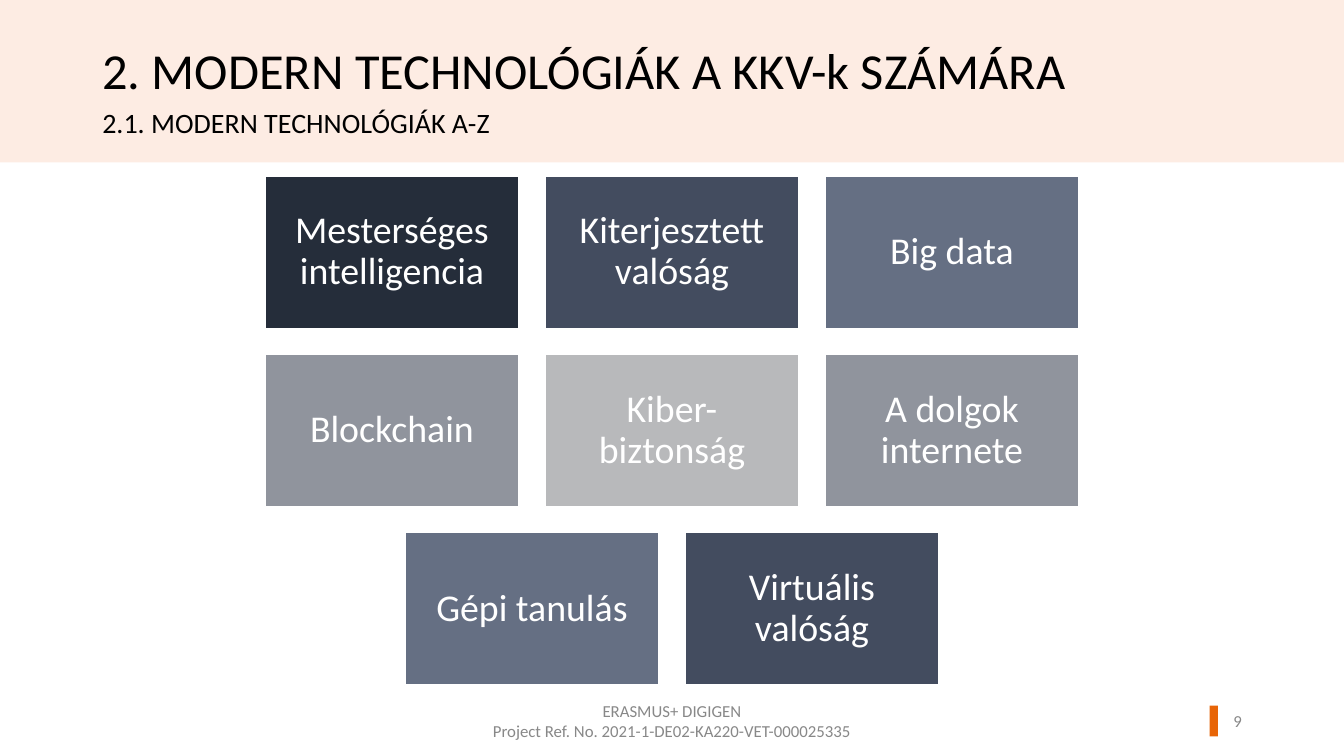
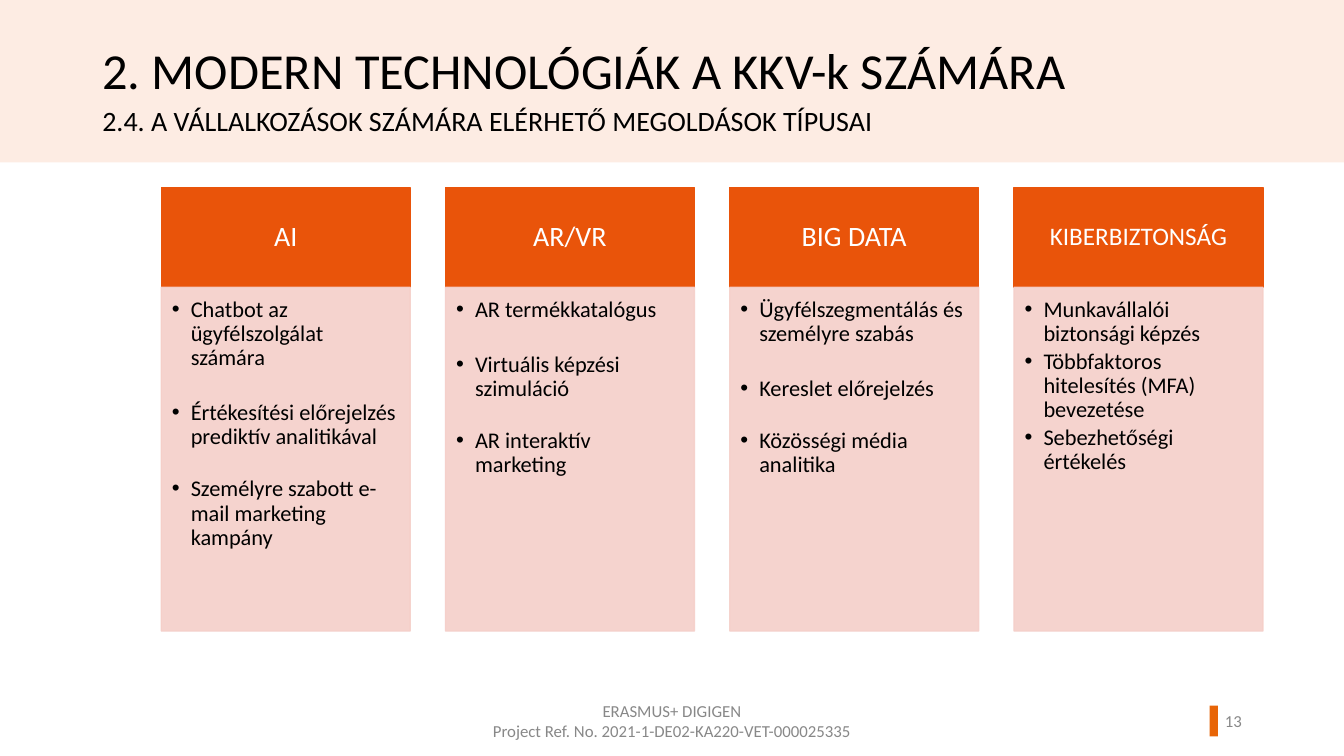
from lxml.etree import SubElement
from pptx import Presentation
from pptx.dml.color import RGBColor
from pptx.enum.shapes import MSO_SHAPE as Preset
from pptx.enum.text import MSO_ANCHOR as Anchor, PP_ALIGN as Align
from pptx.oxml.ns import qn
from pptx.util import Pt

COLORS = {
    "band": "FDECE3", "accent": "E86507", "footer": "888888",
    "text": "000000", "white": "FFFFFF",
    "header": "E9540A", "body": "F5CFC9",
    "navy": "252D3A", "slate": "434C5F", "steel": "656F83",
    "grey": "90949D", "silver": "B8B9BB",
}
FONT = "Calibri"
SLIDE_WIDTH, SLIDE_HEIGHT = 960, 540

TITLE = "2. MODERN TECHNOLÓGIÁK A KKV-k SZÁMÁRA"
FOOTER = "ERASMUS+ DIGIGEN\nProject Ref. No. 2021-1-DE02-KA220-VET-000025335"

TECHNOLOGY_ROWS = [
    [("Mesterséges intelligencia", "navy"), ("Kiterjesztett valóság", "slate"), ("Big data", "steel")],
    [("Blockchain", "grey"), ("Kiber-\nbiztonság", "silver"), ("A dolgok internete", "grey")],
    [("Gépi tanulás", "steel"), ("Virtuális valóság", "slate")],
]

WIDE_GAPS = (0, 22, 20)
TIGHT_GAPS = (0, 2.7, 2.7)
SOLUTIONS = [
    ("AI", 20, WIDE_GAPS, [
        "Chatbot az ügyfélszolgálat számára",
        "Értékesítési előrejelzés prediktív analitikával",
        "Személyre szabott e-mail marketing kampány",
    ]),
    ("AR/VR", 20, WIDE_GAPS, [
        "AR termékkatalógus",
        "Virtuális képzési szimuláció",
        "AR interaktív marketing",
    ]),
    ("BIG DATA", 20, WIDE_GAPS, [
        "Ügyfélszegmentálás és személyre szabás",
        "Kereslet előrejelzés",
        "Közösségi média analitika",
    ]),
    ("KIBERBIZTONSÁG", 18, TIGHT_GAPS, [
        "Munkavállalói biztonsági képzés",
        "Többfaktoros hitelesítés (MFA) bevezetése",
        "Sebezhetőségi értékelés",
    ]),
]


def rgb(name):
    return RGBColor.from_string(COLORS[name])


def add_box(slide, left, top, width, height, fill, line=None):
    shape = slide.shapes.add_shape(Preset.RECTANGLE, Pt(left), Pt(top), Pt(width), Pt(height))
    shape.shadow.inherit = False
    shape.fill.solid()
    shape.fill.fore_color.rgb = rgb(fill)
    if line:
        shape.line.color.rgb = rgb(line)
        shape.line.width = Pt(1)
    else:
        shape.line.fill.background()
    return shape


def write(shape, text, size, color, align=Align.LEFT, anchor=Anchor.TOP,
          insets=(7.2, 3.6, 7.2, 3.6), spacing=0.9):
    frame = shape.text_frame
    frame.word_wrap = True
    frame.vertical_anchor = anchor
    frame.margin_left, frame.margin_top, frame.margin_right, frame.margin_bottom = map(Pt, insets)
    frame.text = text
    for paragraph in frame.paragraphs:
        paragraph.alignment = align
        paragraph.line_spacing = spacing
        for run in paragraph.runs:
            run.font.name = FONT
            run.font.size = Pt(size)
            run.font.color.rgb = rgb(color)
    return frame


def add_text(slide, left, top, width, height, *args, **options):
    box = slide.shapes.add_textbox(Pt(left), Pt(top), Pt(width), Pt(height))
    write(box, *args, **options)


def add_bullet(paragraph, indent):
    properties = paragraph._p.get_or_add_pPr()
    properties.set("marL", str(Pt(indent)))
    properties.set("indent", str(-Pt(indent)))
    color = SubElement(properties, qn("a:buClr"))
    SubElement(color, qn("a:srgbClr"), val=COLORS["text"])
    SubElement(properties, qn("a:buFont"), typeface="Arial")
    SubElement(properties, qn("a:buChar"), char="•")


def set_opacity(shape, percent):
    for color in shape._element.spPr.iter(qn("a:srgbClr")):
        SubElement(color, qn("a:alpha"), val=str(percent * 1000))


def start_slide(presentation, number, subtitle, subtitle_top):
    slide = presentation.slides.add_slide(presentation.slide_layouts[6])
    add_box(slide, 0, 0, SLIDE_WIDTH, 116, "band")
    add_box(slide, 864, 504, 6, 22, "accent")
    add_text(slide, 318, 500.4, 324, 28.8, FOOTER, 12, "footer",
             align=Align.CENTER, anchor=Anchor.MIDDLE, spacing=1.0)
    add_text(slide, 847.4, 500.4, 46.8, 28.8, str(number), 12, "footer",
             align=Align.RIGHT, anchor=Anchor.MIDDLE, spacing=1.0)
    add_text(slide, 66, 29.5, 800, 61.2, TITLE, 36, "text")
    add_text(slide, 66, subtitle_top, 781, 40, subtitle, 20, "text")
    return slide


def add_technology_grid(slide):
    width, height, gap, top = 181.6, 109, 18.4, 125.6
    for row_index, row in enumerate(TECHNOLOGY_ROWS):
        row_width = len(row) * (width + gap) - gap
        row_left = (SLIDE_WIDTH - row_width) / 2
        for column, (name, fill) in enumerate(row):
            tile = add_box(slide, row_left + column * (width + gap),
                           top + row_index * (height + gap), width, height, fill, "white")
            write(tile, name, 27, "white", Align.CENTER, Anchor.MIDDLE, (8, 8, 8, 8))


def add_solution_columns(slide):
    left, top, width, pitch = 115.2, 134, 177.8, 203.04
    header_height, body_height = 71.2, 245.6
    for index, (name, size, gaps, items) in enumerate(SOLUTIONS):
        column_left = left + index * pitch
        header = add_box(slide, column_left, top, width, header_height, "header", "header")
        write(header, name, size, "white", Align.CENTER, Anchor.MIDDLE, (10, 6, 10, 6))
        body = add_box(slide, column_left, top + header_height, width, body_height, "body", "body")
        set_opacity(body, 90)
        frame = write(body, "\n".join(items), 16, "text", insets=(7.6, 7.6, 10, 11.4))
        for paragraph, gap in zip(frame.paragraphs, gaps):
            paragraph.space_before = Pt(gap)
            add_bullet(paragraph, 13.5)


def main():
    presentation = Presentation()
    presentation.slide_width = Pt(SLIDE_WIDTH)
    presentation.slide_height = Pt(SLIDE_HEIGHT)
    add_technology_grid(start_slide(
        presentation, 9, "2.1. MODERN TECHNOLÓGIÁK A-Z", 74.2))
    add_solution_columns(start_slide(
        presentation, 13, "2.4. A VÁLLALKOZÁSOK SZÁMÁRA ELÉRHETŐ MEGOLDÁSOK TÍPUSAI", 72.8))
    presentation.save("out.pptx")


if __name__ == "__main__":
    main()
